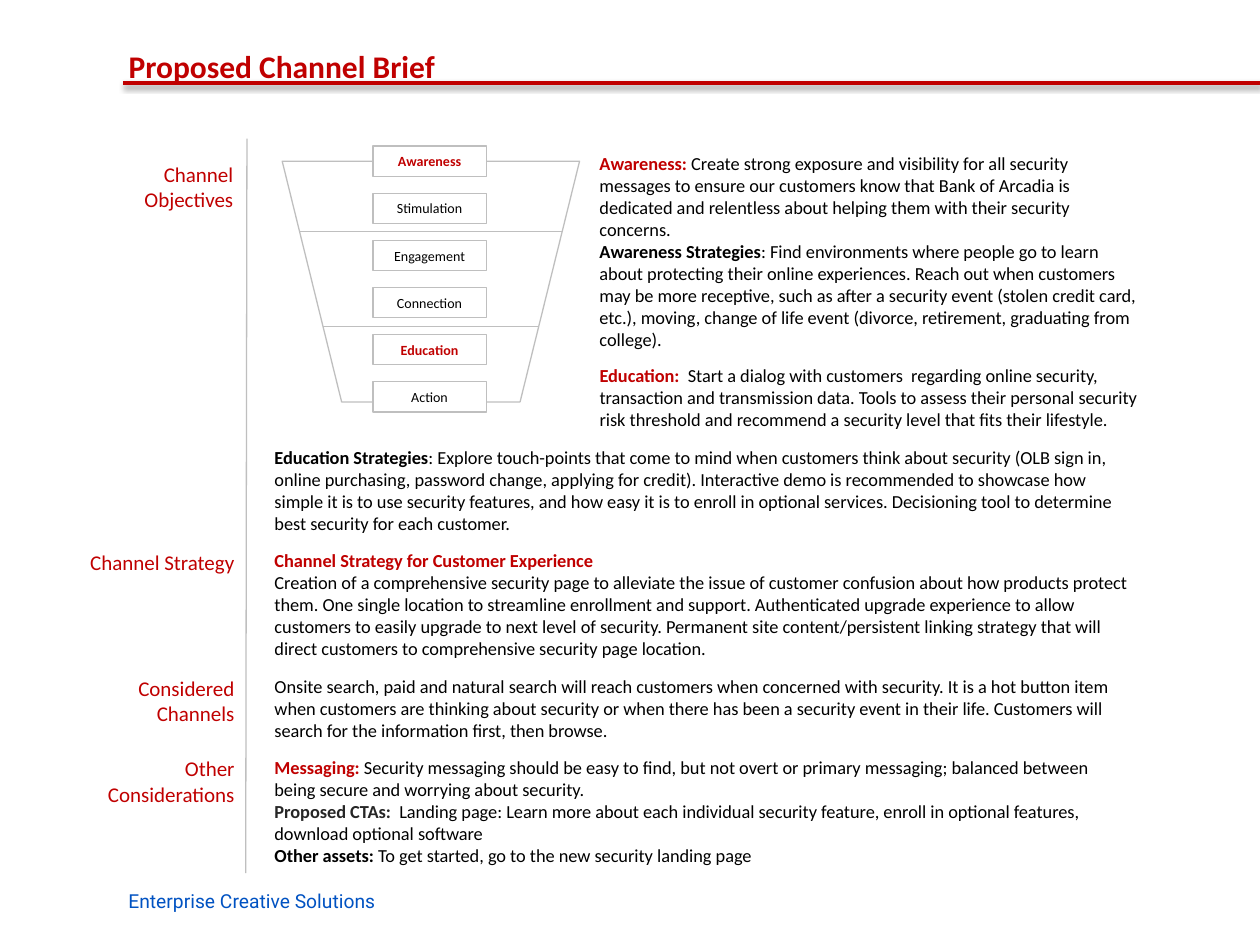
from lxml import etree
from pptx import Presentation
from pptx.dml.color import RGBColor
from pptx.enum import shapes, text
from pptx.oxml import ns
from pptx.util import Inches, Pt

RED = RGBColor(0xC0, 0x00, 0x00)
GRAY = RGBColor(0xBF, 0xBF, 0xBF)
BLACK = RGBColor(0x00, 0x00, 0x00)
CHARCOAL = RGBColor(0x26, 0x26, 0x26)
BLUE = RGBColor(0x00, 0x52, 0xC2)
WHITE = RGBColor(0xFF, 0xFF, 0xFF)

FUNNEL = (2.24, 1.28, 2.36, 1.91)
DIVIDERS = (1.84, 2.59)
STAGES = ("Awareness", "Stimulation", "Engagement", "Connection", "Education", "Action")
FOCUS_STAGES = ("Awareness", "Education")

LABELS = (
    ("Channel Objectives", 0.6, 1.23),
    ("Channel Strategy", 0.61, 4.31),
    ("Considered Channels", 0.61, 5.31),
    ("Other Considerations", 0.61, 5.95),
)

BODIES = (
    ((4.66, 1.16, 4.46, 1.87), [
        [("Awareness: ", RED, True),
         ("Create strong exposure and visibility for all security messages to ensure our "
          "customers know that Bank of Arcadia is dedicated and relentless about helping "
          "them with their security concerns.", BLACK, False)],
        [("Awareness Strategies", BLACK, True),
         (": Find environments where people go to learn about protecting their online "
          "experiences. Reach out when customers may be more receptive, such as after a "
          "security event (stolen credit card, etc.), moving, change of life event (divorce, "
          "retirement, graduating from college).", BLACK, False)],
    ]),
    ((4.66, 2.84, 4.52, 0.63), [
        [("Education: ", RED, True),
         (" Start a dialog with customers  regarding online security,  transaction and "
          "transmission data. Tools to assess their personal security risk threshold and "
          "recommend a security level that fits their lifestyle.", BLACK, False)],
    ]),
    ((2.08, 3.49, 6.92, 0.81), [
        [("Education Strategies", BLACK, True),
         (": Explore touch-points that come to mind when customers think about security "
          "(OLB sign in, online purchasing, password change, applying for credit). Interactive "
          "demo is recommended to showcase how simple it is to use security features, and how "
          "easy it is to enroll in optional services. Decisioning tool to determine best "
          "security for each customer.", BLACK, False)],
    ]),
    ((2.08, 4.31, 7.02, 0.98), [
        [("Channel Strategy for Customer Experience", RED, True)],
        [("Creation of a comprehensive security page to alleviate the issue of customer "
          "confusion about how products protect them. One single location to streamline "
          "enrollment and support. Authenticated upgrade experience to allow customers to "
          "easily upgrade to next level of security. Permanent site content/persistent linking "
          "strategy that will direct customers to comprehensive security page location.",
          BLACK, False)],
    ]),
    ((2.08, 5.31, 7.02, 0.63), [
        [("Onsite search, paid and natural search will reach customers when concerned with "
          "security. It is a hot button item when customers are thinking about security or when "
          "there has been a security event in their life. Customers will search for the "
          "information first, then browse.", BLACK, False)],
    ]),
    ((2.08, 5.95, 6.93, 1.25), [
        [("Messaging: ", RED, True),
         ("Security messaging should be easy to find, but not overt or primary messaging; "
          "balanced between being secure and worrying about security.", BLACK, False)],
        [("Proposed CTAs:  ", CHARCOAL, True),
         ("Landing page: Learn more about each individual security feature, enroll in optional "
          "features, download optional software", BLACK, False)],
        [("Other assets: ", BLACK, True),
         ("To get started, go to the new security landing page", BLACK, False)],
    ]),
)


def add_run(p, content, size, color, bold=False, font="Calibri"):
    """Append one formatted run to a paragraph."""
    r = p.add_run()
    r.text = content
    r.font.name, r.font.size, r.font.bold = font, Pt(size), bold
    r.font.color.rgb = color


def add_text(s, box, paragraphs, size, align=text.PP_ALIGN.LEFT, font="Calibri"):
    """Add a wrapping text box of paragraphs given as lists of runs."""
    tf = s.shapes.add_textbox(*map(Inches, box)).text_frame
    tf.word_wrap = True
    for i, runs in enumerate(paragraphs):
        p = tf.add_paragraph() if i else tf.paragraphs[0]
        p.alignment = align
        for content, color, bold in runs:
            add_run(p, content, size, color, bold, font)


def add_line(s, start, end, color=GRAY, width=0.75, shadow=False):
    """Draw a straight line, with a soft drop shadow if asked."""
    line = s.shapes.add_connector(shapes.MSO_CONNECTOR.STRAIGHT, *map(Inches, start + end))
    line.line.color.rgb, line.line.width = color, Pt(width)
    effects = etree.SubElement(line._element.spPr, ns.qn("a:effectLst"))
    if shadow:
        outer = etree.SubElement(effects, ns.qn("a:outerShdw"), blurRad=str(Pt(3.1)),
                                 dist=str(Pt(1.6)), dir="5400000", rotWithShape="0")
        tone = etree.SubElement(outer, ns.qn("a:srgbClr"), val="000000")
        etree.SubElement(tone, ns.qn("a:alpha"), val="38000")


def add_outline(s, kind, box):
    """Add a preset shape with a thin gray outline and no shadow."""
    sp = s.shapes.add_shape(kind, *map(Inches, box))
    sp.shadow.inherit = False
    sp.line.color.rgb, sp.line.width = GRAY, Pt(0.75)
    return sp


def add_stage(s, name, top):
    """Add one labelled stage box of the funnel."""
    sp = add_outline(s, shapes.MSO_SHAPE.RECTANGLE, (2.96, top, 0.9, 0.24))
    sp.fill.solid()
    sp.fill.fore_color.rgb = WHITE
    tf = sp.text_frame
    tf.vertical_anchor = text.MSO_ANCHOR.MIDDLE
    p = tf.paragraphs[0]
    p.alignment = text.PP_ALIGN.CENTER
    focus = name in FOCUS_STAGES
    add_run(p, name, 8, RED if focus else BLACK, focus)


def add_funnel(s):
    """Draw the funnel, its dividers and its evenly spaced stages."""
    left, top, width, height = FUNNEL
    add_outline(s, shapes.MSO_SHAPE.FLOWCHART_MANUAL_OPERATION, FUNNEL).fill.background()
    for y in DIVIDERS:
        inset = (y - top) / height * width / 5
        add_line(s, (left + inset, y), (left + width - inset, y))
    for i, name in enumerate(STAGES):
        add_stage(s, name, 1.16 + i * 1.87 / 5)


def set_title(s, content):
    """Place and format the title placeholder."""
    sp = s.shapes.title
    sp.left, sp.top, sp.width, sp.height = map(Inches, (1.02, 0, 7.92, 0.67))
    tf = sp.text_frame
    tf.auto_size = text.MSO_AUTO_SIZE.NONE
    tf.vertical_anchor = text.MSO_ANCHOR.BOTTOM
    tf.margin_left = tf.margin_bottom = 0
    p = tf.paragraphs[0]
    p.alignment = text.PP_ALIGN.LEFT
    add_run(p, content, 18, RED, True)


def main():
    """Build the channel brief slide and save it."""
    prs = Presentation()
    prs.slide_width, prs.slide_height = Inches(10), Inches(7.5)
    s = prs.slides.add_slide(prs.slide_layouts[5])
    set_title(s, "Proposed Channel Brief")
    add_line(s, (0.98, 0.66), (10, 0.66), RED, 2, shadow=True)
    add_line(s, (1.96, 1.1), (1.95, 6.93))
    add_funnel(s)
    for label, left, top in LABELS:
        add_text(s, (left, top, 1.35, 0.5), [[(label, RED, False)]], 12, text.PP_ALIGN.RIGHT)
    for box, paragraphs in BODIES:
        add_text(s, box, paragraphs, 10.5)
    add_text(s, (0.92, 7.01, 4.58, 0.29),
             [[("Enterprise Creative Solutions", BLUE, False)]], 11, font="Roboto")
    prs.save("out.pptx")


if __name__ == "__main__":
    main()
